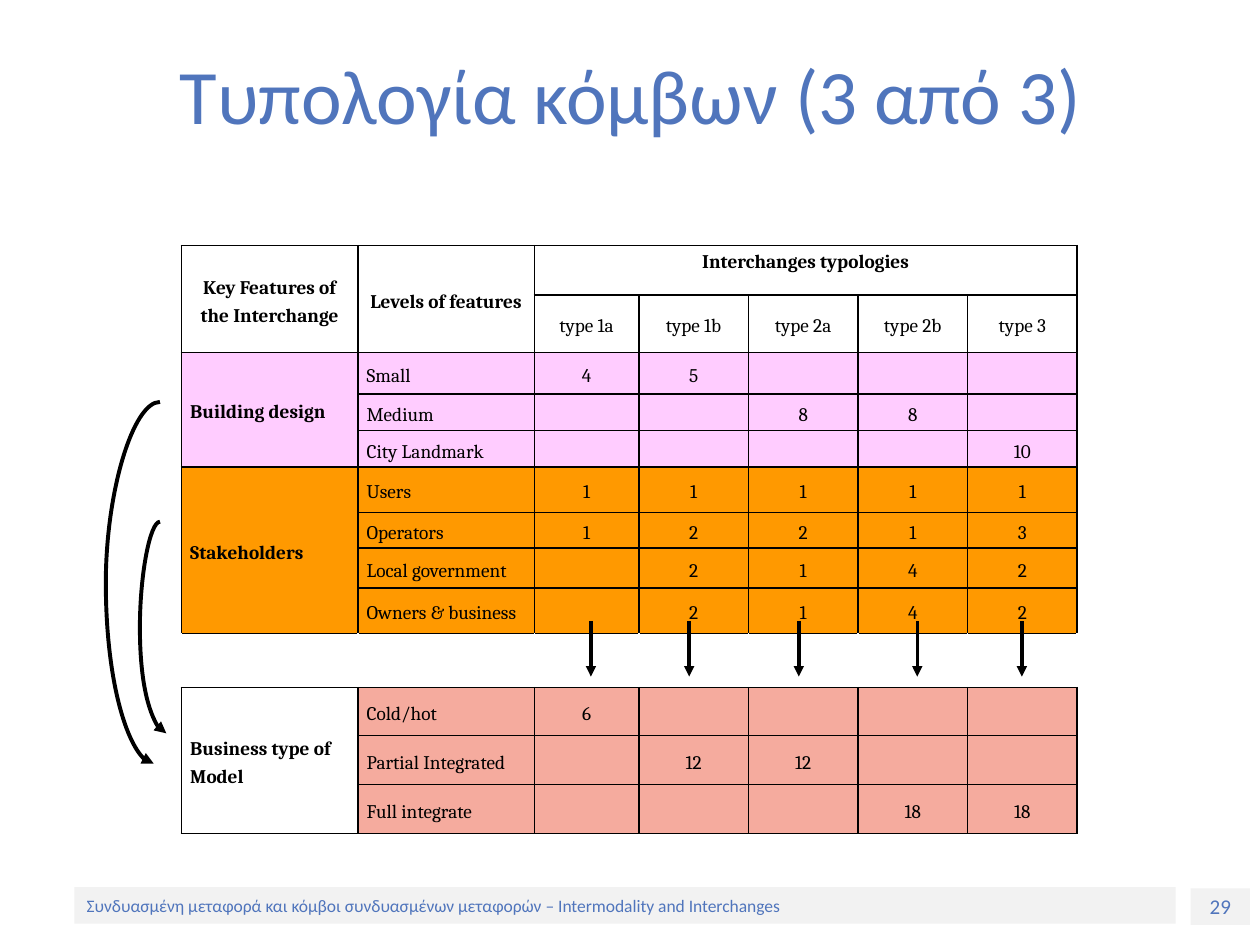
from lxml.etree import SubElement
from pptx import Presentation
from pptx.dml.color import RGBColor
from pptx.enum.shapes import MSO_CONNECTOR, MSO_SHAPE
from pptx.enum.text import MSO_ANCHOR, PP_ALIGN
from pptx.oxml.ns import qn
from pptx.util import Inches, Pt

COLORS = {"black": "000000", "white": "FFFFFF", "blue": "5075BC", "bar": "F2F2F2",
          "pink": "FFCCFF", "orange": "FF9900", "salmon": "F5AB9E"}

COLUMN_WIDTHS = [1.4, 1.4, 0.83] + [0.87] * 4
ROW_HEIGHTS = [0.39, 0.45, 0.33, 0.29, 0.29, 0.36, 0.28, 0.32, 0.36, 0.43, 0.38, 0.39, 0.39]
TYPES = ["type 1a", "type 1b", "type 2a", "type 2b", "type 3"]
SPACER_ROW = 9

# First row, feature, feature fill, level fill, levels with one value per type
FEATURES = [
    (2, "Building design", "pink", "pink", [
        ("Small", ["4", "5", "", "", ""]),
        ("Medium", ["", "", "8", "8", ""]),
        ("City Landmark", ["", "", "", "", "10"])]),
    (5, "Stakeholders", "orange", "orange", [
        ("Users", ["1", "1", "1", "1", "1"]),
        ("Operators", ["1", "2", "2", "1", "3"]),
        ("Local government", ["", "2", "1", "4", "2"]),
        ("Owners & business", ["", "2", "1", "4", "2"])]),
    (10, "Business type of Model", "white", "salmon", [
        ("Cold/hot", ["6", "", "", "", ""]),
        ("Partial Integrated", ["", "12", "12", "", ""]),
        ("Full integrate", ["", "", "", "18", "18"])]),
]


def rgb(name):
    return RGBColor.from_string(COLORS[name])


def add_run(paragraph, text, font, size, color, bold=False):
    run = paragraph.add_run()
    run.text = text
    run.font.name = font
    run.font.size = Pt(size)
    run.font.bold = bold
    run.font.color.rgb = rgb(color)


def add_title(slide, left, top, width, height):
    title = slide.shapes.add_textbox(Inches(left), Inches(top), Inches(width), Inches(height))
    frame = title.text_frame
    frame.word_wrap = True
    frame.vertical_anchor = MSO_ANCHOR.MIDDLE
    frame.paragraphs[0].alignment = PP_ALIGN.CENTER
    add_run(frame.paragraphs[0], "Τυπολογία κόμβων (3 από 3)", "Calibri", 44, "blue")


def add_footer_bar(slide, left, top, width, height, text, size, align):
    bar = slide.shapes.add_shape(MSO_SHAPE.RECTANGLE, Inches(left), Inches(top),
                                 Inches(width), Inches(height))
    bar.shadow.inherit = False
    bar.fill.solid()
    bar.fill.fore_color.rgb = rgb("bar")
    bar.line.fill.background()
    frame = bar.text_frame
    frame.word_wrap = True
    frame.vertical_anchor = MSO_ANCHOR.MIDDLE
    frame.paragraphs[0].alignment = align
    add_run(frame.paragraphs[0], text, "Calibri", size, "blue")


def set_borders(cell, sides):
    properties = cell._tc.get_or_add_tcPr()
    for side in sides:
        border = SubElement(properties, qn(f"a:ln{side}"), w=str(Pt(1)))
        fill = SubElement(border, qn("a:solidFill"))
        SubElement(fill, qn("a:srgbClr"), val=COLORS["black"])


def fill_cell(cell, text, fill, align=PP_ALIGN.CENTER, bold=False,
              anchor=MSO_ANCHOR.MIDDLE, sides="LRTB"):
    set_borders(cell, sides)
    cell.fill.solid()
    cell.fill.fore_color.rgb = rgb(fill)
    cell.margin_left = cell.margin_right = Inches(0.07)
    cell.margin_top = cell.margin_bottom = 0
    cell.vertical_anchor = anchor
    paragraph = cell.text_frame.paragraphs[0]
    paragraph.alignment = align
    paragraph.line_spacing = 1.25
    if text:
        add_run(paragraph, text, "Cambria", 11, "black", bold)
    else:
        # Keeps an empty cell from stretching its row
        SubElement(paragraph._p, qn("a:endParaRPr"), sz="1100")


def fill_header(table):
    for column, heading in enumerate(["Key Features of the Interchange", "Levels of features"]):
        fill_cell(table.cell(0, column), heading, "white", bold=True)
        fill_cell(table.cell(1, column), "", "white")
        table.cell(0, column).merge(table.cell(1, column))
    for column, type_name in enumerate(TYPES, start=2):
        heading = "Interchanges typologies" if column == 2 else ""
        fill_cell(table.cell(0, column), heading, "white", bold=True, anchor=MSO_ANCHOR.TOP)
        fill_cell(table.cell(1, column), type_name, "white")
    table.cell(0, 2).merge(table.cell(0, 6))


def fill_feature(table, first_row, feature, feature_fill, level_fill, levels):
    for row, (level, values) in enumerate(levels, start=first_row):
        fill_cell(table.cell(row, 0), feature if row == first_row else "", feature_fill,
                  PP_ALIGN.LEFT, bold=True)
        fill_cell(table.cell(row, 1), level, level_fill, PP_ALIGN.LEFT)
        for column, value in enumerate(values, start=2):
            fill_cell(table.cell(row, column), value, level_fill)
    table.cell(first_row, 0).merge(table.cell(first_row + len(levels) - 1, 0))


def add_typology_table(slide, left, top):
    table = slide.shapes.add_table(
        len(ROW_HEIGHTS), len(COLUMN_WIDTHS), Inches(left), Inches(top),
        Inches(sum(COLUMN_WIDTHS)), Inches(sum(ROW_HEIGHTS))).table
    table.first_row = table.horz_banding = False
    for column, width in zip(table.columns, COLUMN_WIDTHS):
        column.width = Inches(width)
    for row, height in zip(table.rows, ROW_HEIGHTS):
        row.height = Inches(height)
    fill_header(table)
    for feature in FEATURES:
        fill_feature(table, *feature)
    for column in range(len(COLUMN_WIDTHS)):
        fill_cell(table.cell(SPACER_ROW, column), "", "white", sides="TB")


def add_arrow(slide, kind, x1, y1, x2, y2, width):
    arrow = slide.shapes.add_connector(kind, Inches(x1), Inches(y1), Inches(x2), Inches(y2))
    arrow.line.color.rgb = rgb("black")
    arrow.line.width = Pt(width)
    SubElement(arrow.line._get_or_add_ln(), qn("a:tailEnd"), type="triangle")
    SubElement(arrow._element.spPr, qn("a:effectLst"))
    return arrow


def add_curved_arrow(slide, x1, y1, x2, y2, bulge_x):
    """Curve that swings out to bulge_x on its way down."""
    arrow = add_arrow(slide, MSO_CONNECTOR.CURVE, x1, y1, x2, y2, 2.25)
    geometry = arrow._element.spPr.find(qn("a:prstGeom"))
    guides = geometry.find(qn("a:avLst"))
    if guides is None:
        guides = SubElement(geometry, qn("a:avLst"))
    share = round((bulge_x - x1) / (x2 - x1) * 100000)
    SubElement(guides, qn("a:gd"), name="adj1", fmla=f"val {share}")


def main():
    deck = Presentation()
    deck.slide_width, deck.slide_height = Inches(10), Inches(7.5)
    slide = deck.slides.add_slide(deck.slide_layouts[6])
    add_footer_bar(slide, 9.45, 7.05, 0.47, 0.29, "29", 12, PP_ALIGN.CENTER)
    add_footer_bar(slide, 0.59, 7.04, 8.74, 0.29,
                   "Συνδυασμένη μεταφορά και κόμβοι συνδυασμένων μεταφορών"
                   " – Intermodality and Interchanges", 10, PP_ALIGN.LEFT)
    add_title(slide, 0.51, 0.36, 9, 0.77)
    add_typology_table(slide, 1.44, 1.95)
    for x in (4.69, 5.47, 6.34, 7.28, 8.11):
        add_arrow(slide, MSO_CONNECTOR.STRAIGHT, x, 4.93, x, 5.37, 2)
    add_curved_arrow(slide, 1.27, 3.19, 1.22, 6.06, 0.84)
    add_curved_arrow(slide, 1.27, 4.14, 1.32, 5.82, 1.11)
    deck.save("out.pptx")


if __name__ == "__main__":
    main()
